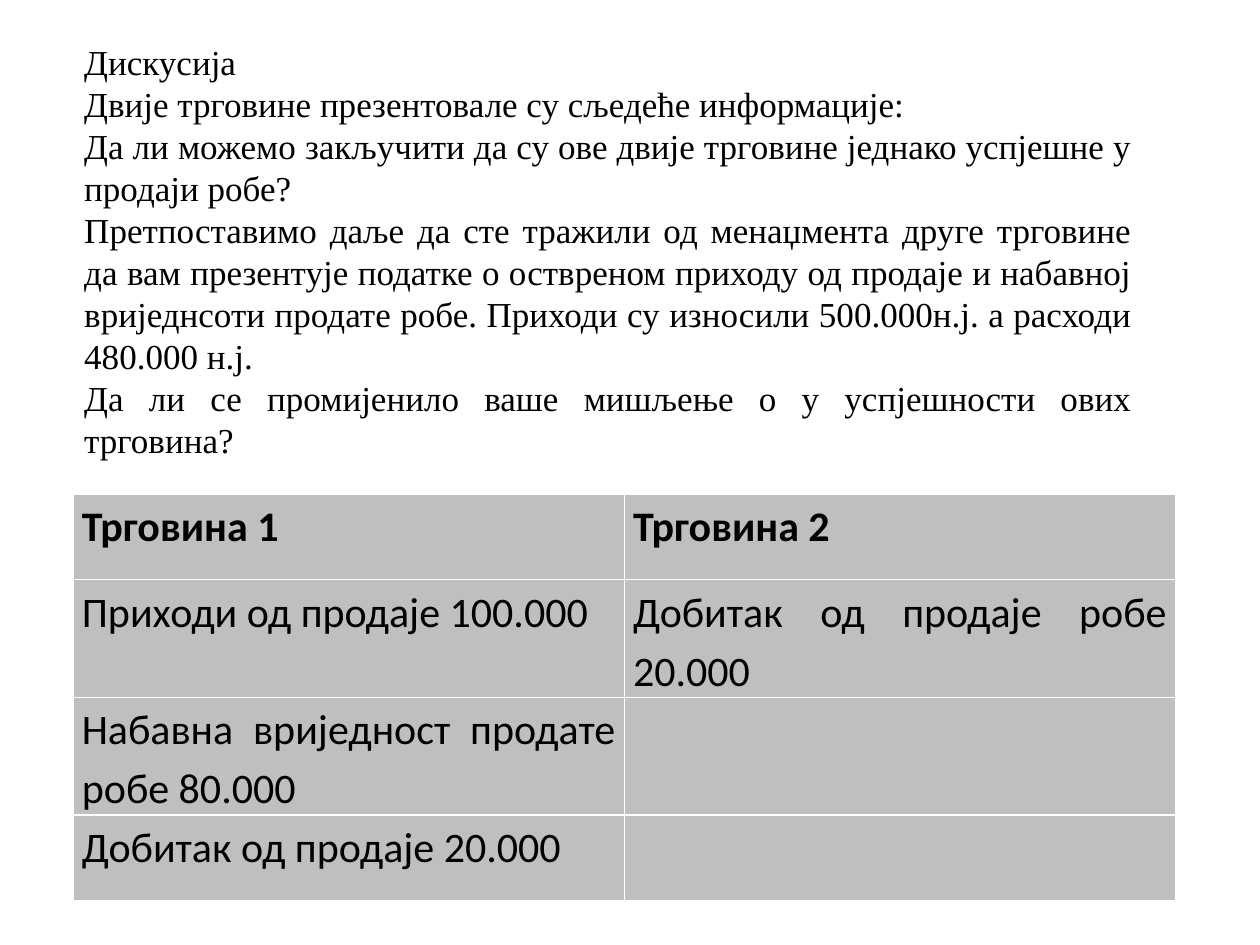
from pptx import Presentation
from pptx.dml.color import RGBColor
from pptx.enum.text import MSO_ANCHOR, PP_ALIGN
from pptx.util import Inches, Pt

BLACK = RGBColor(0x00, 0x00, 0x00)
GRAY = RGBColor(0xBF, 0xBF, 0xBF)

DISCUSSION = [
    "Дискусија",
    "Двије трговине презентовале су сљедеће информације:",
    "Да ли можемо закључити да су ове двије трговине једнако успјешне у продаји робе?",
    "Претпоставимо даље да сте тражили од менаџмента друге трговине да вам "
    "презентује податке о оствреном приходу од продаје и набавној вриједнсоти "
    "продате робе. Приходи су износили 500.000н.ј. а расходи 480.000 н.ј.",
    "Да ли се промијенило ваше мишљење о у успјешности ових трговина?",
]
STORES = [
    ["Трговина 1", "Трговина 2"],
    ["Приходи од продаје 100.000", "Добитак од продаје робе 20.000"],
    ["Набавна вриједност продате робе 80.000", ""],
    ["Добитак од продаје 20.000", ""],
]


def write_text(paragraph, text, font, size, bold=False, spacing=None):
    paragraph.alignment = PP_ALIGN.JUSTIFY
    paragraph.line_spacing = spacing
    run = paragraph.add_run()
    run.text = text
    run.font.name = font
    run.font.size = Pt(size)
    run.font.bold = bold
    run.font.color.rgb = BLACK


def add_discussion(slide, left, top, width, height):
    discussion = slide.shapes.add_textbox(left, top, width, height).text_frame
    discussion.word_wrap = True
    discussion.vertical_anchor = MSO_ANCHOR.MIDDLE
    for index, statement in enumerate(DISCUSSION):
        paragraph = discussion.add_paragraph() if index else discussion.paragraphs[0]
        write_text(paragraph, statement, font="Times New Roman", size=20)


def add_store_comparison(slide, left, top, width, height):
    comparison = slide.shapes.add_table(
        len(STORES), len(STORES[0]), left, top, width, height
    ).table
    for row, entries in enumerate(STORES):
        for column, entry in enumerate(entries):
            cell = comparison.cell(row, column)
            cell.fill.solid()
            cell.fill.fore_color.rgb = GRAY
            cell.margin_left = cell.margin_right = Inches(0.07)
            cell.margin_top = cell.margin_bottom = 0
            if entry:
                write_text(cell.text_frame.paragraphs[0], entry, font="Calibri",
                           size=24, bold=row == 0, spacing=1.15)


def main():
    presentation = Presentation()
    presentation.slide_width = Inches(10)
    presentation.slide_height = Inches(7.5)
    slide = presentation.slides.add_slide(presentation.slide_layouts[6])
    add_store_comparison(slide, Inches(0.58), Inches(3.92), Inches(8.75), Inches(2.72))
    add_discussion(slide, Inches(0.57), Inches(0.25), Inches(8.51), Inches(3.47))
    presentation.save("out.pptx")


if __name__ == "__main__":
    main()
